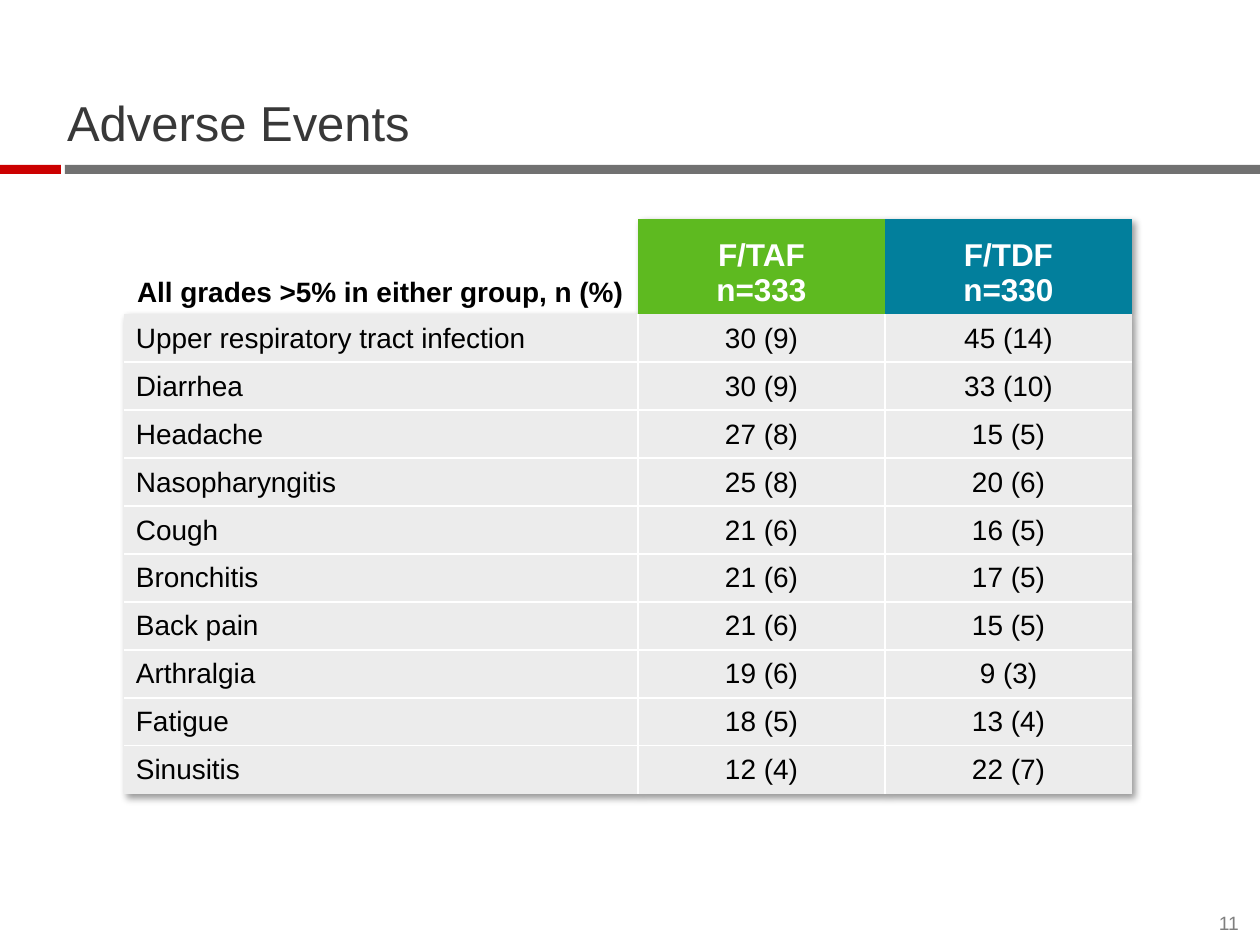
from dataclasses import dataclass

from lxml.etree import SubElement
from pptx import Presentation
from pptx.dml.color import RGBColor
from pptx.enum.shapes import MSO_SHAPE
from pptx.enum.text import MSO_ANCHOR, MSO_AUTO_SIZE, PP_ALIGN
from pptx.oxml import parse_xml
from pptx.oxml.ns import nsdecls, qn
from pptx.util import Emu, Pt


@dataclass(frozen=True)
class Theme:
    """Colours, type sizes and font of the slide."""
    font: str = "Arial"
    title: str = "383838"
    rule: str = "717171"
    accent: str = "CC0000"
    number: str = "7F7F7F"
    ink: str = "000000"
    white: str = "FFFFFF"
    taf: str = "5EBA20"
    tdf: str = "027F9C"
    body: str = "ECECEC"
    title_size: int = 28
    group_size: int = 18
    body_size: int = 16
    number_size: int = 11


THEME = Theme()
SLIDE_SIZE = (1260, 945)
HEADINGS = ("All grades >5% in either group, n (%)", "F/TAF\vn=333", "F/TDF\nn=330")
EVENTS = (
    ("Upper respiratory tract infection", "30 (9)", "45 (14)"),
    ("Diarrhea", "30 (9)", "33 (10)"),
    ("Headache", "27 (8)", "15 (5)"),
    ("Nasopharyngitis", "25 (8)", "20 (6)"),
    ("Cough", "21 (6)", "16 (5)"),
    ("Bronchitis", "21 (6)", "17 (5)"),
    ("Back pain", "21 (6)", "15 (5)"),
    ("Arthralgia", "19 (6)", "9 (3)"),
    ("Fatigue", "18 (5)", "13 (4)"),
    ("Sinusitis", "12 (4)", "22 (7)"),
)


def px(length):
    """Turn pixels into EMU."""
    return Emu(round(length * 914400 / 126))


def apply(target, **values):
    """Set each format value on the target."""
    for name, value in values.items():
        setattr(target, name, value)


def write(frame, text, size, color, align=PP_ALIGN.LEFT, bold=False, spacing=None):
    """Put formatted text into a text frame."""
    frame.text = text
    for paragraph in frame.paragraphs:
        apply(paragraph, alignment=align, line_spacing=spacing)
        for run in paragraph.runs:
            apply(run.font, name=THEME.font, size=Pt(size), bold=bold)
            run.font.color.rgb = RGBColor.from_string(color)


def fit_frame(frame, wrap):
    """Anchor a frame at the bottom without margins."""
    apply(frame, margin_left=0, margin_right=0, margin_top=0, margin_bottom=0,
          vertical_anchor=MSO_ANCHOR.BOTTOM, word_wrap=wrap,
          auto_size=MSO_AUTO_SIZE.NONE)


def place_title(slide, left, top, width, height):
    """Place the slide title."""
    title = slide.shapes.title
    apply(title, left=px(left), top=px(top), width=px(width), height=px(height))
    fit_frame(title.text_frame, True)
    write(title.text_frame, "Adverse Events", THEME.title_size, THEME.title, spacing=0.9)


def place_rule(slide, left, top, width, height):
    """Draw the red and grey bar under the title."""
    accent_width, gap = 61, 4
    grey_start = accent_width + gap
    for offset, length, color in ((0, accent_width, THEME.accent),
                                  (grey_start, width - grey_start, THEME.rule)):
        bar = slide.shapes.add_shape(MSO_SHAPE.RECTANGLE, px(left + offset), px(top),
                                     px(length), px(height))
        bar.shadow.inherit = False
        bar.fill.solid()
        bar.fill.fore_color.rgb = RGBColor.from_string(color)
        bar.line.fill.background()


def place_number(slide, left, top, width, height):
    """Place the page number."""
    number = slide.shapes.add_textbox(px(left), px(top), px(width), px(height))
    fit_frame(number.text_frame, False)
    write(number.text_frame, "11", THEME.number_size, THEME.number, PP_ALIGN.RIGHT)


def set_borders(cell, visible):
    """Draw white lines on the visible sides and none on the others."""
    properties = cell._tc.get_or_add_tcPr()
    for position, side in enumerate("LRTB"):
        border = parse_xml(f'<a:ln{side} w="12700" {nsdecls("a")}/>')
        if side in visible:
            fill = SubElement(border, qn("a:solidFill"))
            SubElement(fill, qn("a:srgbClr"), val=THEME.white)
        else:
            SubElement(border, qn("a:noFill"))
        properties.insert(position, border)


def fill_cell(cell, text, fill, margins, anchor, **style):
    """Give a cell its text, fill and margins."""
    left, top, right, bottom = map(px, margins)
    apply(cell, margin_left=left, margin_top=top, margin_right=right,
          margin_bottom=bottom, vertical_anchor=anchor)
    if fill:
        cell.fill.solid()
        cell.fill.fore_color.rgb = RGBColor.from_string(fill)
    else:
        cell.fill.background()
    write(cell.text_frame, text, **style)


def add_table_shadow(table):
    """Cast a soft shadow to the lower right of the table."""
    table._tbl.tblPr.insert(0, parse_xml(
        f'<a:effectLst {nsdecls("a")}><a:outerShdw blurRad="50800" dist="38100" '
        'dir="2700000" algn="tl" rotWithShape="0"><a:prstClr val="black">'
        '<a:alpha val="40000"/></a:prstClr></a:outerShdw></a:effectLst>'))


def place_events(slide, left, top, width, height):
    """Build the table of adverse events."""
    header_height, group_width = 95, 247
    last_row, last_column = len(EVENTS), len(HEADINGS) - 1
    table = slide.shapes.add_table(last_row + 1, last_column + 1, px(left), px(top),
                                   px(width), px(height)).table
    apply(table, first_row=False, horz_banding=False)
    add_table_shadow(table)
    for index, column in enumerate(table.columns):
        column.width = px(group_width if index else width - last_column * group_width)
    for index, row in enumerate(table.rows):
        row.height = px((height - header_height) / last_row if index else header_height)

    header_styles = ((None, THEME.ink, THEME.body_size, PP_ALIGN.LEFT),
                     (THEME.taf, THEME.white, THEME.group_size, PP_ALIGN.CENTER),
                     (THEME.tdf, THEME.white, THEME.group_size, PP_ALIGN.CENTER))
    for column, (heading, style) in enumerate(zip(HEADINGS, header_styles)):
        fill, color, size, align = style
        cell = table.cell(0, column)
        fill_cell(cell, heading, fill, (13, 6, 13, 6), MSO_ANCHOR.BOTTOM,
                  size=size, color=color, align=align, bold=True)
        set_borders(cell, "")

    for row, event in enumerate(EVENTS, 1):
        for column, value in enumerate(event):
            cell = table.cell(row, column)
            fill_cell(cell, value, THEME.body, (1 if column else 12, 1, 1, 0),
                      MSO_ANCHOR.MIDDLE, size=THEME.body_size, color=THEME.ink,
                      align=PP_ALIGN.CENTER if column else PP_ALIGN.LEFT)
            inner = {"L": column > 0, "R": column < last_column,
                     "T": row > 1, "B": row < last_row}
            set_borders(cell, [side for side, shown in inner.items() if shown])


def main():
    """Build and save the slide."""
    deck = Presentation()
    deck.slide_width, deck.slide_height = map(px, SLIDE_SIZE)
    slide = deck.slides.add_slide(deck.slide_layouts[5])
    place_rule(slide, 0, 165, SLIDE_SIZE[0], 9)
    place_title(slide, 67, 59, 1134, 93)
    place_number(slide, 1205, 911, 34, 23)
    place_events(slide, 124, 219, 1008, 575)
    deck.save("out.pptx")


if __name__ == "__main__":
    main()
